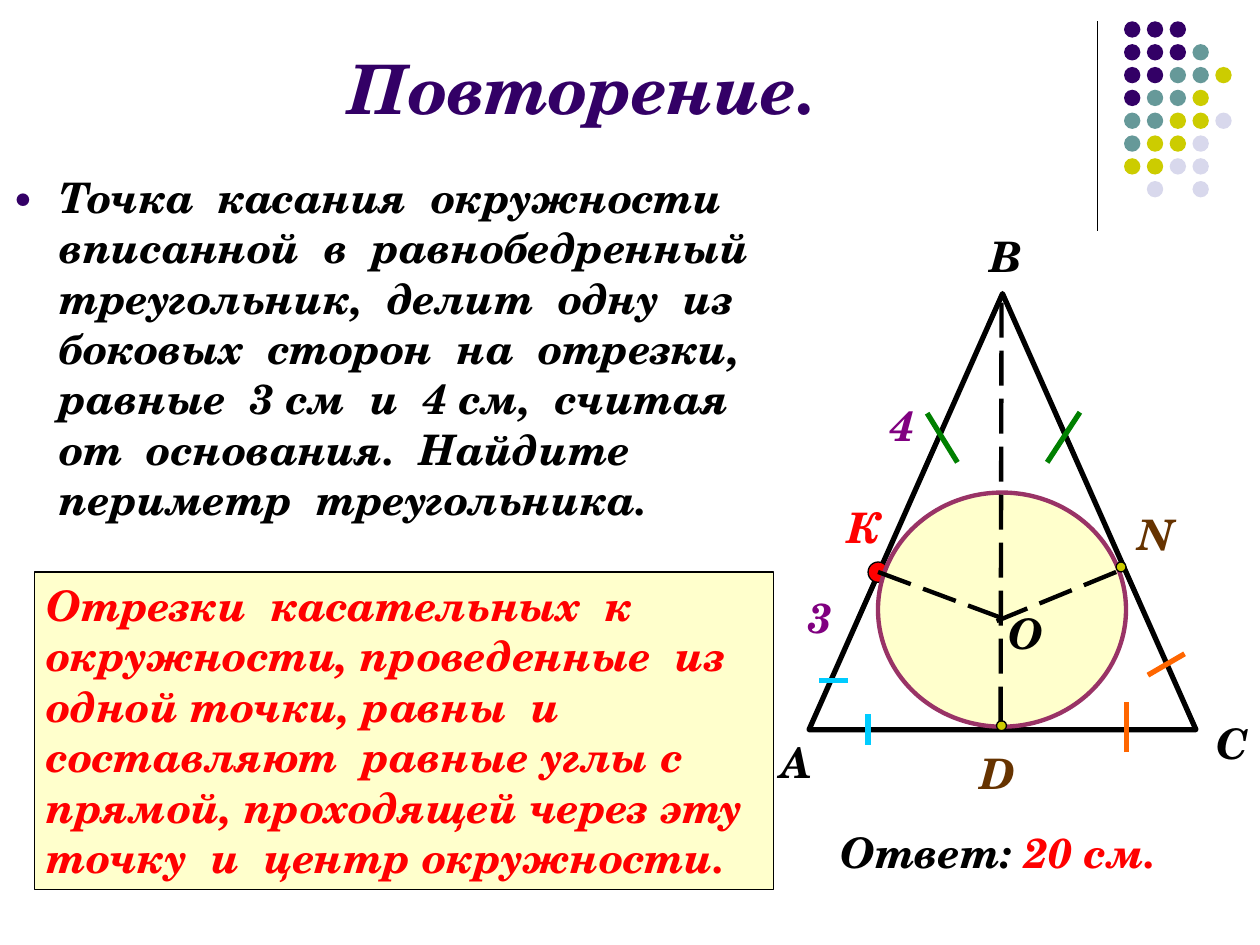
from lxml.etree import SubElement
from pptx import Presentation
from pptx.dml.color import RGBColor
from pptx.enum.dml import MSO_LINE
from pptx.enum.shapes import MSO_CONNECTOR, MSO_SHAPE
from pptx.enum.text import MSO_ANCHOR, PP_ALIGN
from pptx.oxml.ns import qn
from pptx.util import Cm, Pt

FONT = "TeX Gyre Schola"
COLORS = {
    "black": "000000", "white": "FFFFFF", "indigo": "330066", "teal": "669999",
    "olive": "CCCC00", "lavender": "D8D8EC", "cream": "FFFFCC", "plum": "993366",
    "purple": "800080", "red": "FF0000", "brown": "663300", "sky": "00CCFF",
    "orange": "FF6600", "green": "008000",
}

TITLE = "Повторение."
PROBLEM = (
    "Точка  касания  окружности  вписанной  в  равнобедренный  треугольник,  "
    "делит  одну  из  боковых  сторон  на  отрезки,  равные  3 см  и  4 см,  "
    "считая  от  основания.  Найдите  периметр  треугольника."
)
THEOREM = [
    "Отрезки  касательных  к",
    "окружности, проведенные  из",
    "одной точки, равны  и",
    "составляют  равные углы с",
    "прямой, проходящей через эту",
    "точку  и  центр окружности.",
]
ANSWER = [("Ответ: ", "black"), ("20 см.", "red")]

# One letter per dot: indigo, teal, olive, lavender; a space leaves a gap
DOT_ROWS = ["III", "IIIT", "IITTO", "ITTO", "TTOOL", "TOOL", "OOLL", " L L"]
DOT_COLORS = {"I": "indigo", "T": "teal", "O": "olive", "L": "lavender"}
DOT_LEFT, DOT_TOP, DOT_PITCH, DOT_SIZE = 22.66, 0.43, 0.46, 0.33

# All geometry is in centimetres: left, top, width, height
FIGURES = [
    (MSO_SHAPE.ISOSCELES_TRIANGLE, (16.31, 5.92, 7.8, 8.79), "white", "black", 3),
    (MSO_SHAPE.OVAL, (17.5, 11.33, 0.41, 0.41), "red", "black", 0.75),
    (MSO_SHAPE.OVAL, (17.7, 9.93, 5, 4.72), "cream", "plum", 2.5),
    (MSO_SHAPE.OVAL, (20.09, 14.53, 0.2, 0.2), "olive", "black", 0.75),
    (MSO_SHAPE.OVAL, (22.5, 11.33, 0.2, 0.2), "olive", "black", 0.75),
]
# Start x, start y, end x, end y
TICKS = [
    ((16.51, 13.72, 17.09, 13.72), "sky"),
    ((17.5, 14.4, 17.5, 15.01), "sky"),
    ((22.71, 15.16, 22.71, 14.15), "orange"),
    ((23.14, 13.61, 23.88, 13.18), "orange"),
    ((21.77, 8.31, 21.11, 9.32), "green"),
    ((18.69, 8.33, 19.3, 9.32), "green"),
]
DASHED_LINES = [
    (20.19, 6.1, 20.17, 14.68),
    (17.7, 11.53, 20.17, 12.45),
    (22.5, 11.53, 20.09, 12.52),
]
LABELS = [
    ("А", 15.49, 14.73, 1.14, "black"), ("В", 19.71, 4.52, 1.14, "black"),
    ("С", 24.28, 14.33, 1.12, "black"), ("3", 16.05, 11.79, 1.04, "purple"),
    ("4", 17.7, 7.92, 1.07, "purple"), ("К", 16.84, 9.98, 1.19, "red"),
    ("N", 22.71, 10.13, 1.22, "brown"), ("D", 19.51, 14.94, 1.22, "brown"),
    ("O", 20.09, 12.12, 0.81, "black"),
]


def rgb(name):
    return RGBColor.from_string(COLORS[name])


def write_text(shape, paragraphs, size=24, align=PP_ALIGN.LEFT,
               anchor=MSO_ANCHOR.TOP, wrap=False):
    """Fill a shape with paragraphs, each a list of (text, color) runs."""
    frame = shape.text_frame
    frame.word_wrap = wrap
    frame.vertical_anchor = anchor
    for index, runs in enumerate(paragraphs):
        paragraph = frame.add_paragraph() if index else frame.paragraphs[0]
        paragraph.alignment = align
        for text, color in runs:
            run = paragraph.add_run()
            run.text = text
            run.font.name = FONT
            run.font.size = Pt(size)
            run.font.bold = run.font.italic = True
            run.font.color.rgb = rgb(color)


def add_text(slide, box, paragraphs, **text_format):
    shape = slide.shapes.add_textbox(*map(Cm, box))
    write_text(shape, paragraphs, **text_format)
    return shape


def add_figure(slide, kind, box, fill, line=None, width=0.75):
    shape = slide.shapes.add_shape(kind, *map(Cm, box))
    shape.shadow.inherit = False
    shape.fill.solid()
    shape.fill.fore_color.rgb = rgb(fill)
    if line:
        shape.line.color.rgb = rgb(line)
        shape.line.width = Pt(width)
    else:
        shape.line.fill.background()
    return shape


def add_line(slide, ends, color="black", width=3, dash=None):
    line = slide.shapes.add_connector(MSO_CONNECTOR.STRAIGHT, *map(Cm, ends))
    line.line.color.rgb = rgb(color)
    line.line.width = Pt(width)
    if dash:
        line.line.dash_style = dash
    SubElement(line._element.spPr, qn("a:effectLst"))


def add_bullet(paragraph, color):
    properties = paragraph._p.get_or_add_pPr()
    properties.set("marL", str(Cm(0.95)))
    properties.set("indent", str(-Cm(0.95)))
    bullet_color = SubElement(properties, qn("a:buClr"))
    SubElement(bullet_color, qn("a:srgbClr"), val=COLORS[color])
    SubElement(properties, qn("a:buSzPct"), val="70000")
    SubElement(properties, qn("a:buFont"), typeface=FONT)
    SubElement(properties, qn("a:buChar"), char="●")


def add_dot_pattern(slide):
    add_line(slide, (22.12, 0.43, 22.12, 4.65), width=0.75)
    for row, letters in enumerate(DOT_ROWS):
        for column, letter in enumerate(letters):
            if letter in DOT_COLORS:
                box = (DOT_LEFT + column * DOT_PITCH, DOT_TOP + row * DOT_PITCH,
                       DOT_SIZE, DOT_SIZE)
                add_figure(slide, MSO_SHAPE.OVAL, box, DOT_COLORS[letter])


def add_title_and_problem(slide):
    title = slide.shapes.title
    title.left, title.top, title.width, title.height = map(Cm, (1.27, 0.33, 20.96, 2.39))
    write_text(title, [[(TITLE, "indigo")]], size=39, align=PP_ALIGN.CENTER,
               anchor=MSO_ANCHOR.BOTTOM, wrap=True)
    problem = add_text(slide, (0, 3.33, 16, 7.59), [[(PROBLEM, "black")]], wrap=True)
    paragraph = problem.text_frame.paragraphs[0]
    paragraph.space_before = Pt(4.8)
    add_bullet(paragraph, "indigo")


def add_drawing(slide):
    for figure in FIGURES:
        add_figure(slide, *figure)
    for ends, color in TICKS:
        add_line(slide, ends, color)
    for ends in DASHED_LINES:
        add_line(slide, ends, width=2.5, dash=MSO_LINE.LONG_DASH)
    for text, left, top, width, color in LABELS:
        add_text(slide, (left, top, width, 1.27), [[(text, color)]])


def main():
    presentation = Presentation()
    presentation.slide_width, presentation.slide_height = Cm(25.4), Cm(19.05)
    slide = presentation.slides.add_slide(presentation.slide_layouts[5])
    add_dot_pattern(slide)
    add_title_and_problem(slide)
    add_drawing(slide)
    add_text(slide, (16.69, 16.54, 7.21, 1.27), [ANSWER])
    theorem = add_figure(slide, MSO_SHAPE.RECTANGLE, (0.69, 11.53, 14.91, 6.4),
                         "cream", "black")
    write_text(theorem, [[(line, "red")] for line in THEOREM],
               anchor=MSO_ANCHOR.MIDDLE)
    presentation.save("out.pptx")


if __name__ == "__main__":
    main()
